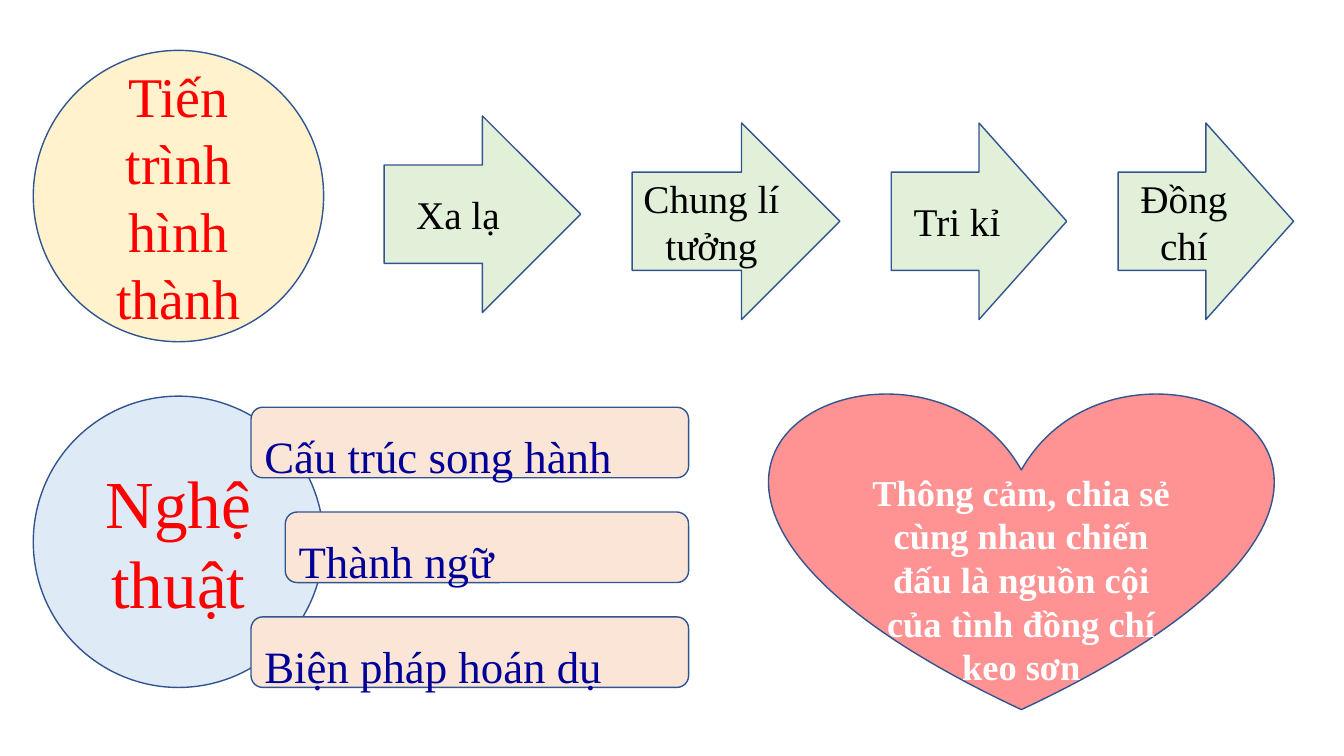
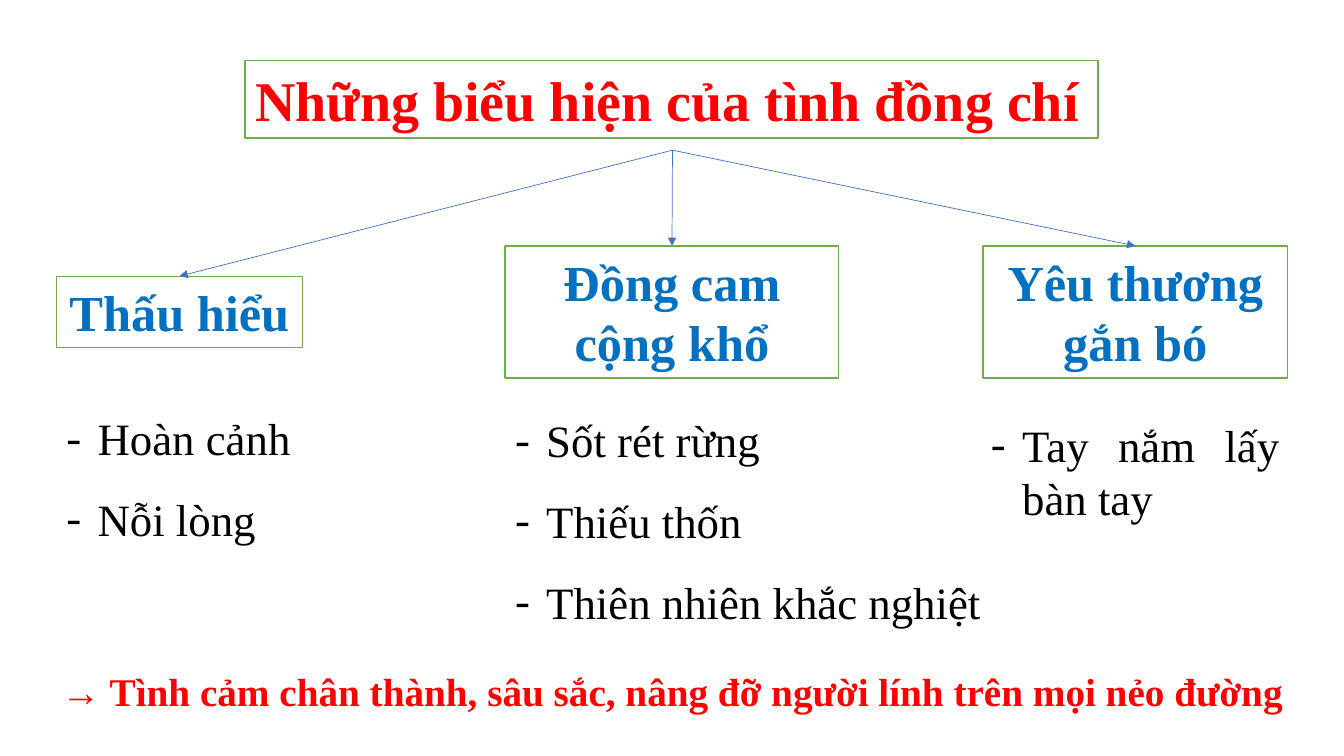
from lxml import etree
from pptx import Presentation
from pptx.dml.color import RGBColor
from pptx.enum.shapes import MSO_CONNECTOR as Connector, MSO_SHAPE as Shape
from pptx.enum.text import MSO_ANCHOR as Anchor, MSO_AUTO_SIZE as AutoSize, PP_ALIGN as Align
from pptx.oxml.ns import qn
from pptx.util import Inches, Pt

FONT = "Times New Roman"
RED, BLUE, NAVY, BLACK, WHITE = "FF0000", "0070C0", "000099", "000000", "FFFFFF"
OUTLINE, FRAME, ARROW = "325491", "70AD47", "4472C4"
CREAM, SKY, MINT, PEACH, ROSE = "FFF2CC", "DEEBF7", "E2F0D9", "FBE5D6", "FF9393"
TITLE_ONLY, BLANK = 5, 6


def rgb(value):
    """Turn a hex string into a colour."""
    return RGBColor.from_string(value)


def write(shape, text, size=28, color=BLACK, bold=False, align=Align.CENTER,
          anchor=Anchor.MIDDLE, spacing=None, before=0, top=0.05):
    """Put one formatted paragraph into a shape and return the paragraph."""
    frame = shape.text_frame
    frame.word_wrap = True
    frame.auto_size = AutoSize.NONE
    frame.vertical_anchor = anchor
    frame.margin_top = Inches(top)
    paragraph = frame.paragraphs[0]
    paragraph.alignment = align
    paragraph.line_spacing = spacing
    paragraph.space_before = Pt(before)
    run = paragraph.add_run()
    run.text = text
    font = run.font
    font.name, font.size, font.bold = FONT, Pt(size), bold
    font.color.rgb = rgb(color)
    return paragraph


class Deck:
    """Holds the presentation, its style and the current slide."""

    def __init__(self):
        """Start a widescreen presentation."""
        self.presentation = Presentation()
        self.presentation.slide_width = Inches(13.33)
        self.presentation.slide_height = Inches(7.5)
        self.slide = None

    def add_slide(self, layout):
        """Add a slide and make it current."""
        self.slide = self.presentation.slides.add_slide(
            self.presentation.slide_layouts[layout])

    def paint(self, shape, fill, line):
        """Give a shape a solid fill and a thin outline."""
        shape.fill.solid()
        shape.fill.fore_color.rgb = rgb(fill)
        shape.line.color.rgb = rgb(line)
        shape.line.width = Pt(1)

    def shape(self, kind, box, fill, text, line=OUTLINE, **style):
        """Draw a preset shape with text."""
        shape = self.slide.shapes.add_shape(kind, *map(Inches, box))
        shape.shadow.inherit = False
        self.paint(shape, fill, line)
        write(shape, text, **style)

    def title(self, box, text):
        """Place the framed slide title."""
        title = self.slide.shapes.title
        title.left, title.top, title.width, title.height = map(Inches, box)
        self.paint(title, WHITE, FRAME)
        write(title, text, size=40, color=RED, bold=True,
              align=Align.LEFT, anchor=Anchor.TOP)

    def text(self, box, text, **style):
        """Add a plain text box and return its paragraph."""
        shape = self.slide.shapes.add_textbox(*map(Inches, box))
        return write(shape, text, anchor=Anchor.TOP, **style)

    def bullet(self, box, text):
        """Add a text box holding one dashed item."""
        paragraph = self.text(box, text, size=32, align=Align.JUSTIFY)
        properties = paragraph._p.get_or_add_pPr()
        properties.set("marL", str(Inches(0.31)))
        properties.set("indent", str(-Inches(0.31)))
        etree.SubElement(properties, qn("a:buFont")).set("typeface", FONT)
        etree.SubElement(properties, qn("a:buChar")).set("char", "-")

    def arrow(self, start, end):
        """Draw a thin line with an arrowhead at its end."""
        line = self.slide.shapes.add_connector(
            Connector.STRAIGHT, *map(Inches, (*start, *end)))
        line.line.color.rgb = rgb(ARROW)
        line.line.width = Pt(0.5)
        etree.SubElement(line.line._get_or_add_ln(), qn("a:tailEnd")).set("type", "triangle")
        etree.SubElement(line._element.spPr, qn("a:effectLst"))


def build_formation(deck):
    """Build the slide on how comradeship forms."""
    deck.add_slide(BLANK)
    deck.shape(Shape.OVAL, (0.33, 0.5, 2.88, 2.89), CREAM,
               "Tiến trình hình thành", size=40, color=RED)
    stages = [("Xa lạ", 3.81, 1.15, 1.95), ("Chung lí tưởng", 6.27, 1.22, 2.06),
              ("Tri kỉ", 8.84, 1.22, 1.74), ("Đồng chí", 11.09, 1.22, 1.74)]
    for stage, left, top, width in stages:
        deck.shape(Shape.RIGHT_ARROW, (left, top, width, 1.95), MINT, stage)

    deck.shape(Shape.OVAL, (0.33, 3.93, 2.88, 2.89), SKY,
               "Nghệ thuật", size=48, color=RED)
    devices = [("Cấu trúc song hành", 2.49), ("Thành ngữ", 2.83),
               ("Biện pháp hoán dụ", 2.49)]
    for row, (device, left) in enumerate(devices):
        deck.shape(Shape.ROUNDED_RECTANGLE, (left, 4.04 + row * 1.04, 6.83 - left, 0.7),
                   PEACH, device, size=32, color=NAVY, align=Align.LEFT,
                   spacing=1.5, before=6.4)
    deck.shape(Shape.HEART, (7.64, 3.87, 4.98, 3.17), ROSE,
               "Thông cảm, chia sẻ cùng nhau chiến đấu là nguồn cội "
               "của tình đồng chí keo sơn",
               size=26, color=WHITE, bold=True, anchor=Anchor.TOP, top=0)


def build_expressions(deck):
    """Build the slide on the expressions of comradeship."""
    deck.add_slide(TITLE_ONLY)
    deck.title((2.43, 0.6, 8.46, 0.77), "Những biểu hiện của tình đồng chí")
    branches = [
        ("Thấu hiểu", (0.56, 2.74, 2.44, 0.71), 0.56, 4.03,
         [("Hoàn cảnh", 3.06, 0.64), ("Nỗi lòng", 3.06, 0.64)]),
        ("Đồng cam cộng khổ", (5.01, 2.44, 3.31, 1.31), 5.01, 4.05,
         [("Sốt rét rừng", 3.06, 0.64), ("Thiếu thốn", 3.06, 0.64),
          ("Thiên nhiên khắc nghiệt", 5.47, 0.64)]),
        ("Yêu thương gắn bó", (9.75, 2.44, 3.02, 1.31), 9.73, 4.09,
         [("Tay nắm lấy bàn tay", 3.06, 1.18)]),
    ]
    for heading, box, items_left, items_top, items in branches:
        left, top, width, _ = box
        deck.shape(Shape.RECTANGLE, box, WHITE, heading, line=FRAME,
                   size=36, color=BLUE, bold=True, anchor=Anchor.TOP)
        deck.arrow((6.67, 1.49), (left + width / 2, top))
        for row, (item, item_width, item_height) in enumerate(items):
            deck.bullet((items_left, items_top + row * 0.8, item_width, item_height), item)
    deck.text((0, 6.57, 13.33, 0.57),
              "→ Tình cảm chân thành, sâu sắc, nâng đỡ người lính trên mọi nẻo đường",
              color=RED, bold=True)


def main():
    """Build and save both slides."""
    deck = Deck()
    build_formation(deck)
    build_expressions(deck)
    deck.presentation.save("out.pptx")


if __name__ == "__main__":
    main()
